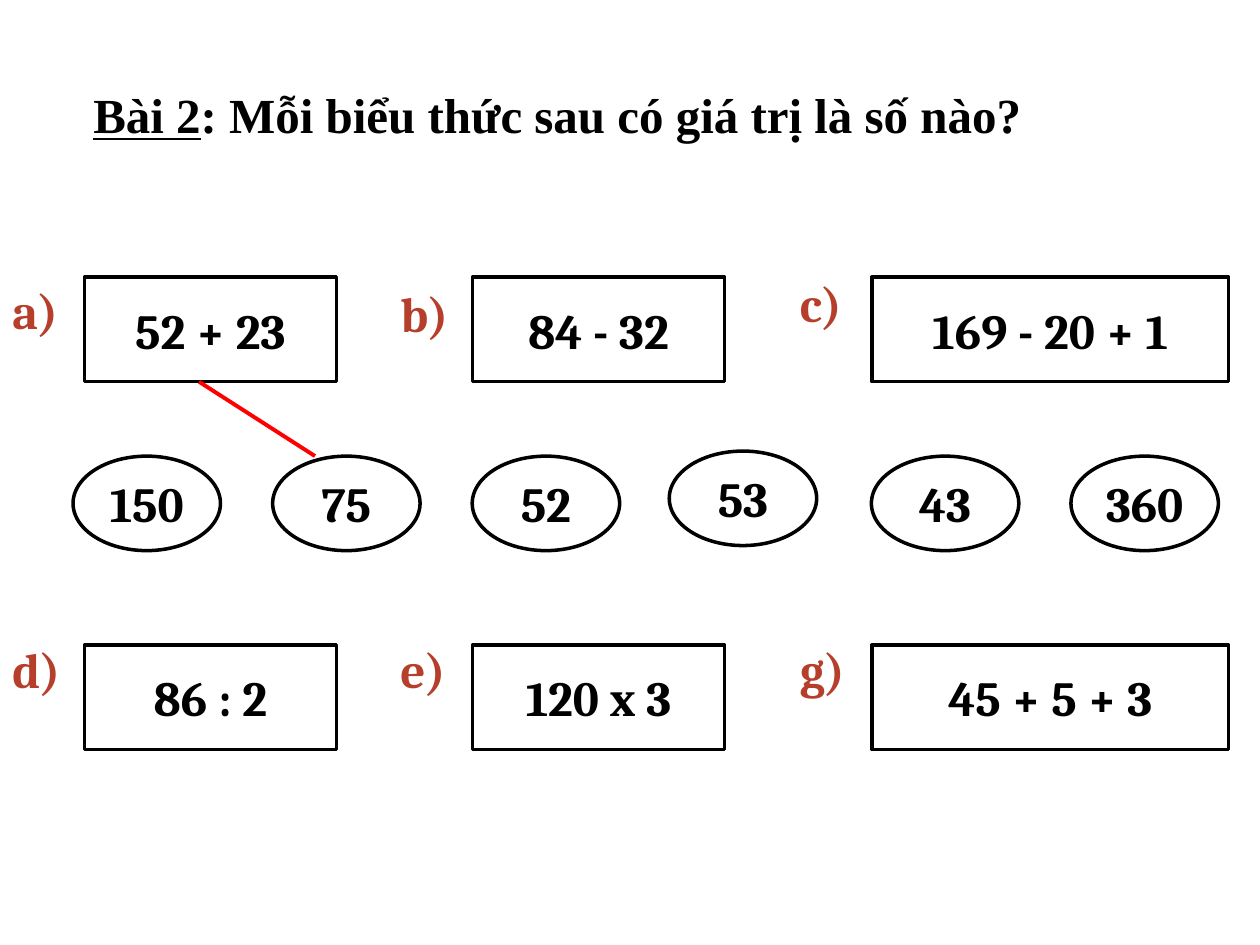
from lxml import etree
from pptx import Presentation
from pptx import util as u
from pptx.dml import color
from pptx.enum import shapes, text
from pptx.oxml import ns

COLORS = {"ink": "000000", "paper": "FFFFFF", "letter": "B53F2B", "answer": "FF0000"}
EXPRESSION_FONT = {"name": "Cambria", "size": u.Pt(28), "bold": True}
HEADING_FONT = {"name": "Times New Roman", "size": u.Pt(28), "bold": True}
HEADING_FRAME = {
    "word_wrap": True,
    "vertical_anchor": text.MSO_ANCHOR.MIDDLE,
    "auto_size": text.MSO_AUTO_SIZE.SHAPE_TO_FIT_TEXT,
}
LETTER_FRAME = {"word_wrap": True, "auto_size": text.MSO_AUTO_SIZE.SHAPE_TO_FIT_TEXT}
VALUE_FRAME = {"word_wrap": False, "vertical_anchor": text.MSO_ANCHOR.MIDDLE}

COLUMNS = [(0.67, 2), (3.75, 2), (6.92, 2.83)]
LETTER_LEFTS = [0, 3.08, 6.25]
TOP_ROW = [("a)", 2.18, "52 + 23"), ("b)", 2.2, "84 - 32"), ("c)", 2.12, "169 - 20 + 1")]
BOTTOM_ROW = [("d)", 5.03, "86 : 2"), ("e)", 5.03, "120 x 3"), ("g)", 5.03, "45 + 5 + 3")]
RESULTS = ["150", "75", "52", "53", "43", "360"]
SHIFTED_RESULT = {"53": (-0.02, -0.04)}


def rgb(name):
    """Return the named palette colour."""
    return color.RGBColor.from_string(COLORS[name])


def apply(target, values):
    """Set every attribute in a dict of format values."""
    for attribute, value in values.items():
        setattr(target, attribute, value)


def inches(box):
    """Turn a box of numbers into lengths."""
    return [u.Inches(length) for length in box]


def write(paragraph, words, font, ink="ink", underline=False):
    """Add one formatted run to a paragraph."""
    run = paragraph.add_run()
    run.text = words
    apply(run.font, {**font, "underline": underline})
    run.font.color.rgb = rgb(ink)


def add_heading(slide, box):
    """Place the exercise heading in the title placeholder."""
    heading = slide.shapes.title
    apply(heading, dict(zip(("left", "top", "width", "height"), inches(box))))
    apply(heading.text_frame, HEADING_FRAME)
    line = heading.text_frame.paragraphs[0]
    line.alignment = text.PP_ALIGN.LEFT
    write(line, "Bài 2", HEADING_FONT, underline=True)
    write(line, ": Mỗi biểu thức sau có giá trị là số nào?", HEADING_FONT)


def add_letter(slide, letter, box):
    """Place the letter of one expression."""
    label = slide.shapes.add_textbox(*inches(box))
    apply(label.text_frame, LETTER_FRAME)
    write(label.text_frame.paragraphs[0], letter, EXPRESSION_FONT, "letter")


def add_value(slide, outline, words, box):
    """Place an outlined expression or result."""
    value = slide.shapes.add_shape(outline, *inches(box))
    value.shadow.inherit = False
    value.fill.solid()
    value.fill.fore_color.rgb = rgb("paper")
    value.line.color.rgb = rgb("ink")
    value.line.width = u.Pt(2)
    apply(value.text_frame, VALUE_FRAME)
    line = value.text_frame.paragraphs[0]
    line.alignment = text.PP_ALIGN.CENTER
    write(line, words, EXPRESSION_FONT)


def add_expressions(slide, row, top):
    """Place a row of lettered expressions."""
    for (letter, letter_top, expression), letter_left, (left, width) in zip(row, LETTER_LEFTS, COLUMNS):
        add_letter(slide, letter, (letter_left, letter_top, 0.75, 0.57))
        add_value(slide, shapes.MSO_SHAPE.RECTANGLE, expression, (left, top, width, 0.83))


def add_results(slide, box):
    """Spread the result ovals evenly across a box."""
    left, top, width, height = box
    oval_width = 1.17
    pitch = (width - oval_width) / (len(RESULTS) - 1)
    for index, result in enumerate(RESULTS):
        across, down = SHIFTED_RESULT.get(result, (0, 0))
        place = (left + index * pitch + across, top + down, oval_width, height)
        add_value(slide, shapes.MSO_SHAPE.OVAL, result, place)


def add_answer_line(slide, start, end):
    """Draw the line from an expression to its result."""
    answer = slide.shapes.add_connector(shapes.MSO_CONNECTOR.STRAIGHT, *inches(start + end))
    answer.line.color.rgb = rgb("answer")
    answer.line.width = u.Pt(2.25)
    etree.SubElement(answer._element.spPr, ns.qn("a:effectLst"))


def main():
    """Build and save the exercise slide."""
    deck = Presentation()
    apply(deck, {"slide_width": u.Inches(10), "slide_height": u.Inches(7.5)})
    slide = deck.slides.add_slide(deck.slide_layouts[5])
    add_heading(slide, (0.64, 0.62, 9.75, 0.57))
    add_expressions(slide, TOP_ROW, 2.2)
    add_results(slide, (0.58, 3.62, 9.09, 0.75))
    add_expressions(slide, BOTTOM_ROW, 5.12)
    add_answer_line(slide, (1.58, 3.03), (2.5, 3.62))
    deck.save("out.pptx")


if __name__ == "__main__":
    main()
